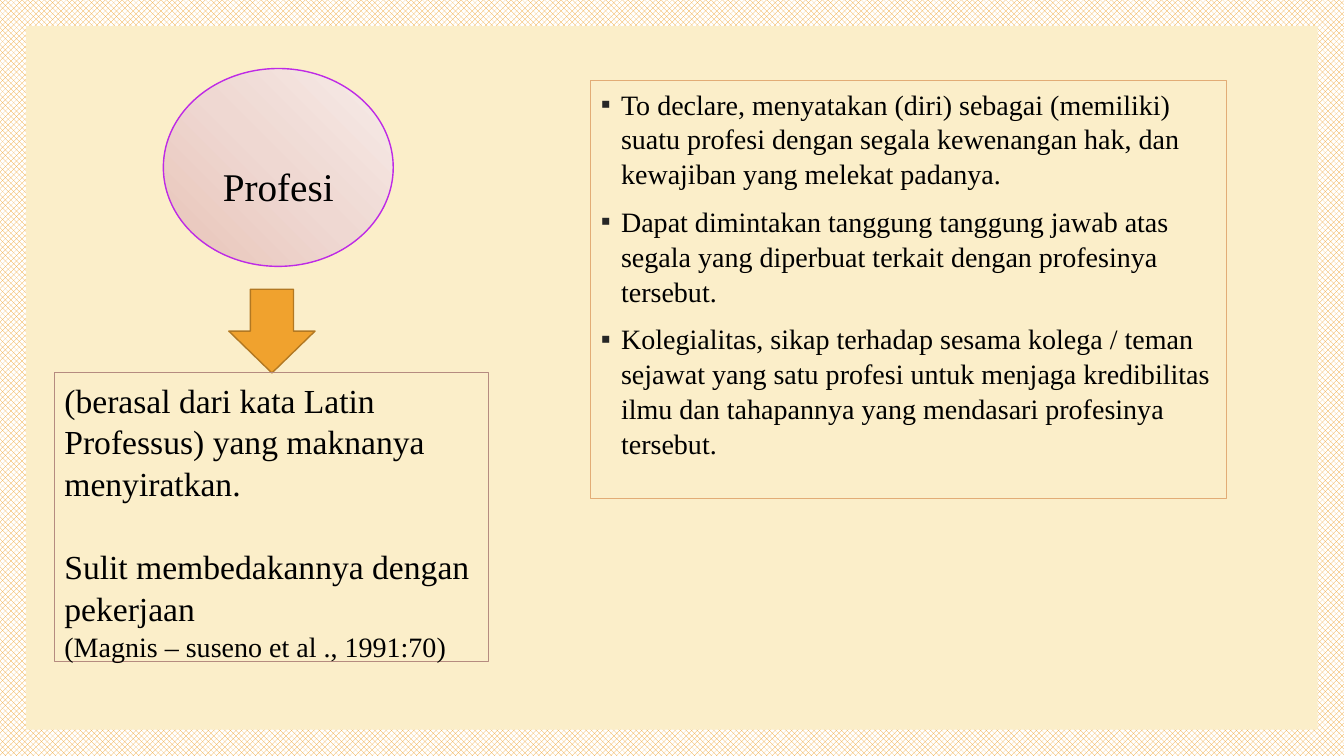
from lxml import etree
from pptx import Presentation
from pptx.dml.color import RGBColor
from pptx.enum import dml, shapes, text
from pptx.oxml import ns, parse_xml
from pptx.util import Inches, Pt

COLORS = {
    "black": "000000", "white": "FFFFFF", "cream": "FBEEC9",
    "orange": "F0A22E", "brown": "B27822", "tan": "E2AC76",
    "mauve": "B58B80", "violet": "BE2AE6", "bullet": "262626",
}
BLUSH_STOPS = [(0, "E8C3B7"), (50, "EFD8D2"), (100, "F7ECE9")]
FONT = "Times New Roman"
WIDTH, HEIGHT = 13.33, 7.5
MARGIN = 0.26

ORIGIN = ["(berasal dari kata Latin Professus) yang maknanya menyiratkan.",
          "Sulit membedakannya dengan pekerjaan",
          "(Magnis – suseno et al ., 1991:70)"]
MEANINGS = [
    "To declare, menyatakan (diri) sebagai (memiliki) suatu profesi dengan "
    "segala kewenangan hak, dan kewajiban yang melekat padanya.",
    "Dapat dimintakan tanggung tanggung jawab atas segala yang diperbuat "
    "terkait dengan profesinya tersebut.",
    "Kolegialitas, sikap terhadap sesama kolega / teman sejawat yang satu "
    "profesi untuk menjaga kredibilitas ilmu dan tahapannya yang mendasari "
    "profesinya tersebut.",
]


def color(name):
    return RGBColor.from_string(COLORS[name])


def place(shape, box):
    shape.left, shape.top, shape.width, shape.height = map(Inches, box)


def outline(shape, name, points):
    shape.line.color.rgb = color(name)
    shape.line.width = Pt(points)


def add_figure(page, kind, box, fill=None):
    figure = page.shapes.add_shape(kind, *map(Inches, box))
    figure.shadow.inherit = False
    if fill:
        figure.fill.solid()
        figure.fill.fore_color.rgb = color(fill)
    else:
        figure.fill.background()
    return figure


def write(shape, lines, size, anchor=text.MSO_ANCHOR.TOP,
          align=text.PP_ALIGN.LEFT):
    """Fill the shape with one paragraph per line and return the paragraphs."""
    frame = shape.text_frame
    frame.text = "\n".join(lines)
    frame.word_wrap = True
    frame.auto_size = text.MSO_AUTO_SIZE.NONE
    frame.vertical_anchor = anchor
    for para in frame.paragraphs:
        para.alignment = align
        para.font.name, para.font.size = FONT, Pt(size)
        para.font.color.rgb = color("black")
    return frame.paragraphs


def add_bullet(para, indent):
    props = para._p.get_or_add_pPr()
    props.set("marL", str(Inches(indent)))
    props.set("indent", str(-Inches(indent)))
    bullet_color = etree.Element(ns.qn("a:buClr"))
    etree.SubElement(bullet_color, ns.qn("a:srgbClr"), val=COLORS["bullet"])
    bullet = etree.Element(ns.qn("a:buChar"), char="▪")
    # Bullet settings come before the default run properties
    for part in (bullet_color, bullet):
        props.find(ns.qn("a:defRPr")).addprevious(part)


def blush_gradient(shape):
    """Radial gradient that spreads from the lower left corner."""
    stops = "".join(
        f'<a:gs pos="{share * 1000}"><a:srgbClr val="{value}"/></a:gs>'
        for share, value in BLUSH_STOPS)
    gradient = parse_xml(
        f'<a:gradFill {ns.nsdecls("a")} rotWithShape="1">'
        f'<a:gsLst>{stops}</a:gsLst><a:path path="circle">'
        '<a:fillToRect t="100000" r="100000"/></a:path></a:gradFill>')
    props = shape._element.spPr
    props.replace(props.find(ns.qn("a:noFill")), gradient)


def draw_backdrop(page):
    fill = page.background.fill
    fill.patterned()
    fill.pattern = dml.MSO_PATTERN.OUTLINED_DIAMOND
    fill.fore_color.rgb = color("orange")
    fill.back_color.rgb = color("white")
    panel = add_figure(page, shapes.MSO_SHAPE.RECTANGLE,
                       (MARGIN, MARGIN, WIDTH - 2 * MARGIN,
                        HEIGHT - 2 * MARGIN), "cream")
    panel.line.fill.background()
    # The panel lies behind the placeholders
    page.shapes.title._element.addprevious(panel._element)


def draw_term(page, box):
    """Circle with the term, and an arrow down to its origin."""
    left, top, width, height = box
    circle = add_figure(page, shapes.MSO_SHAPE.OVAL,
                        (left, top, width, 0.65 * height))
    blush_gradient(circle)
    outline(circle, "violet", 1)

    title = page.shapes.title
    place(title, (left - 0.1 * width, top + 0.29 * height,
                  1.2 * width, 0.19 * height))
    write(title, ["Profesi"], 28, align=text.PP_ALIGN.CENTER)
    circle._element.addnext(title._element)

    arrow = add_figure(page, shapes.MSO_SHAPE.DOWN_ARROW,
                       (left + 0.285 * width, top + 0.725 * height,
                        0.375 * width, 0.275 * height), "orange")
    outline(arrow, "brown", 1)


def draw_origin(page, box):
    note = add_figure(page, shapes.MSO_SHAPE.RECTANGLE, box)
    outline(note, "mauve", 0.75)
    paragraphs = write(note, ORIGIN, 24)
    for para in paragraphs:
        para.line_spacing = 1.04
    paragraphs[1].space_before = Pt(28.8)
    paragraphs[-1].font.size = Pt(20)


def draw_meanings(page, box):
    body = page.placeholders[1]
    place(body, box)
    outline(body, "tan", 0.75)
    for para in write(body, MEANINGS, 20):
        para.line_spacing = 1.04
        para.space_before = Pt(9)
        add_bullet(para, 0.2)


def main():
    deck = Presentation()
    deck.slide_width, deck.slide_height = Inches(WIDTH), Inches(HEIGHT)
    page = deck.slides.add_slide(deck.slide_layouts[1])
    draw_backdrop(page)
    draw_meanings(page, (5.86, 0.8, 6.31, 4.15))
    draw_term(page, (1.62, 0.68, 2.28, 3.02))
    draw_origin(page, (0.54, 3.7, 4.31, 2.86))
    deck.save("out.pptx")


if __name__ == "__main__":
    main()
